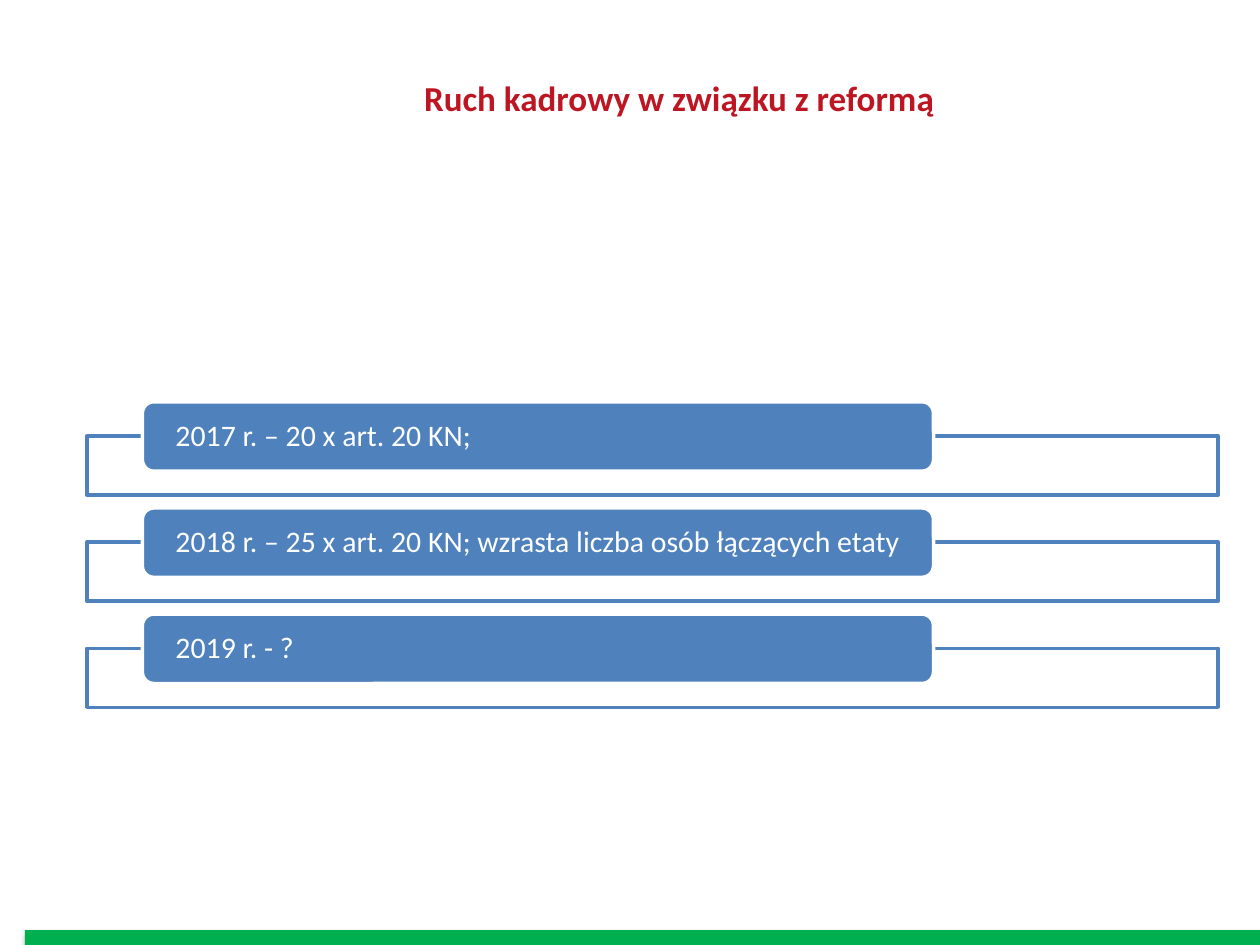
"""Builds a slide on staff changes that follow the reform."""
from lxml import etree
from pptx import Presentation
from pptx import util as u
from pptx.dml.color import RGBColor
from pptx.enum import shapes, text
from pptx.oxml.ns import qn

TITLE = "Ruch kadrowy w związku z reformą"
YEARS = [
    "2017 r. – 20 x art. 20 KN;",
    "2018 r. – 25 x art. 20 KN; wzrasta liczba osób łączących etaty",
    "2019 r. - ?",
]
BLUE, WHITE, GREEN, RED = "4F81BD", "FFFFFF", "00B050", "BD1622"
TOP, STEP, DROP = 8.1, 2.14, 0.69
KIND = shapes.MSO_SHAPE


def tint(hue):
    return RGBColor.from_string(hue)


def node(root, tag, **attrs):
    return etree.SubElement(root, qn(tag), attrs)


def block(slide, kind, area, fill, line=None):
    shape = slide.shapes.add_shape(kind, *map(u.Cm, area))
    shape.shadow.inherit = False
    shape.fill.solid()
    shape.fill.fore_color.rgb = tint(fill)
    if line:
        shape.line.color.rgb = tint(line)
        shape.line.width = u.Pt(2)
    else:
        shape.line.fill.background()
    return shape


def write(shape, words, size, hue, bold=False):
    frame = shape.text_frame
    frame.text = words
    frame.word_wrap = True
    frame.vertical_anchor = text.MSO_ANCHOR.MIDDLE
    para = frame.paragraphs[0]
    para.alignment = text.PP_ALIGN.LEFT
    font = para.runs[0].font
    font.name, font.size, font.bold = "Calibri", u.Pt(size), bold
    font.color.rgb = tint(hue)
    return frame


def shade(shape):
    root = shape._element.spPr.find(qn("a:effectLst"))
    cast = node(root, "a:outerShdw", blurRad=str(u.Pt(3.1)),
                dist=str(u.Pt(1.8)), dir="5400000", rotWithShape="0")
    ink = node(cast, "a:srgbClr", val="000000")
    node(ink, "a:alpha", val="35000")


def entry(slide, top, words):
    back = block(slide, KIND.RECTANGLE, (1.75, top + DROP, 22.81, 1.19), WHITE, BLUE)
    ink = back._element.spPr.find(qn("a:solidFill"))[0]
    node(ink, "a:alpha", val="90000")
    label = block(slide, KIND.ROUNDED_RECTANGLE, (2.87, top, 15.95, 1.4), BLUE, WHITE)
    frame = write(label, words, 17, WHITE)
    frame.margin_left, frame.margin_right = u.Cm(0.6), u.Cm(0.4)
    frame.margin_top = frame.margin_bottom = 0
    frame.paragraphs[0].line_spacing = 0.9


def main():
    deck = Presentation()
    deck.slide_width, deck.slide_height = u.Cm(25.4), u.Cm(19.05)
    slide = deck.slides.add_slide(deck.slide_layouts[6])
    shade(block(slide, KIND.RECTANGLE, (0.5, 18.75, 24.9, 0.3), GREEN))
    head = slide.shapes.add_textbox(*map(u.Cm, (8.3, 1.12, 15, 1.7)))
    write(head, TITLE, 20, RED, True)
    for row, words in enumerate(YEARS):
        entry(slide, TOP + row * STEP, words)
    deck.save("out.pptx")


if __name__ == "__main__":
    main()
